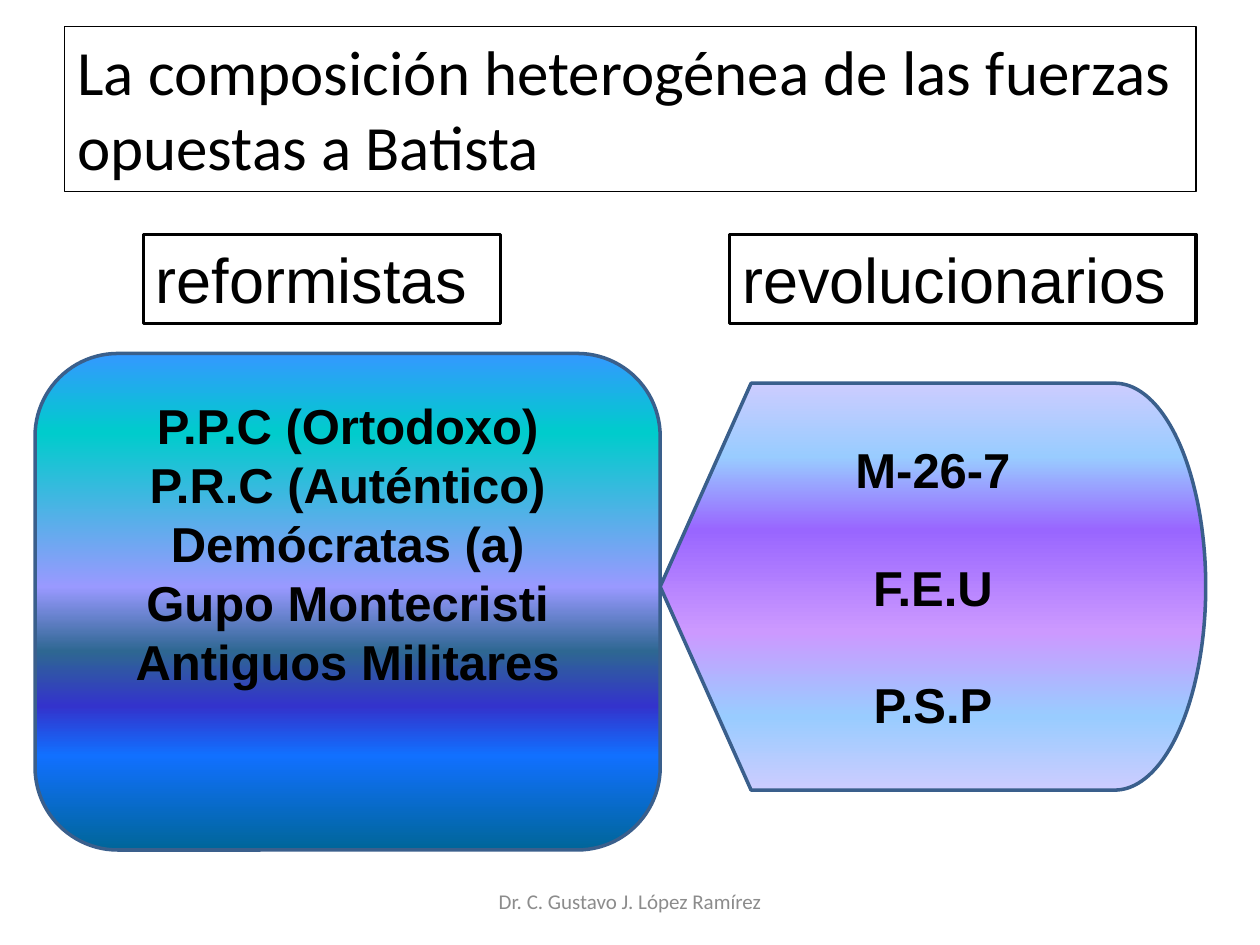
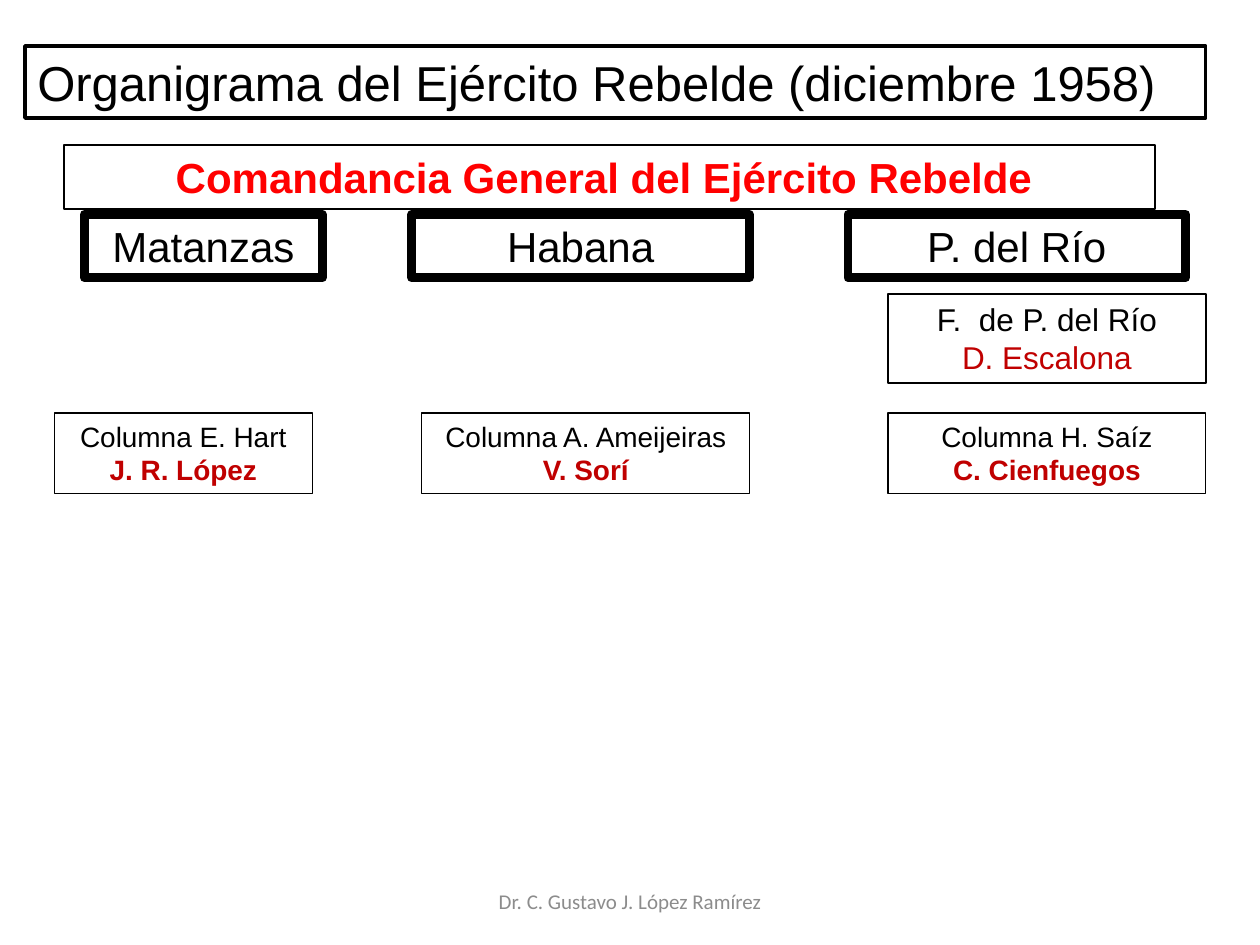
from lxml.etree import SubElement
from pptx import Presentation
from pptx.dml.color import RGBColor
from pptx.enum.shapes import MSO_SHAPE
from pptx.enum.text import MSO_ANCHOR, MSO_AUTO_SIZE, PP_ALIGN
from pptx.oxml.ns import qn
from pptx.util import Pt

BLACK, RED, DARK, GREY, BLUE = "000000", "FF0000", "C00000", "8C8C8C", "3A5F8C"
LEFT, CENTER = PP_ALIGN.LEFT, PP_ALIGN.CENTER
FOOTER = "Dr. C. Gustavo J. López Ramírez"


def color(code):
    return RGBColor.from_string(code)


def panel(slide, area, lines, size, width, align=CENTER, font="Arial",
          kind=MSO_SHAPE.RECTANGLE, edge=BLACK, stops=()):
    """Add a shape; each line is (text, colour, bold). No width means no outline."""
    shape = slide.shapes.add_shape(kind, *[Pt(n) for n in area])
    shape.shadow.inherit = False
    if width:
        shape.line.color.rgb = color(edge)
        shape.line.width = Pt(width)
    else:
        shape.line.fill.background()
    if stops:
        shape.fill.gradient()
        shape.fill.gradient_angle = 270
        ramp = next(shape._element.iter(qn("a:gsLst")))
        for old in list(ramp):
            ramp.remove(old)
        for place, code in stops:
            stop = SubElement(ramp, qn("a:gs"), pos=str(place * 1000))
            SubElement(stop, qn("a:srgbClr"), val=code)
    else:
        shape.fill.background()
    frame = shape.text_frame
    frame.word_wrap = True
    boxed = width and not stops
    frame.auto_size = MSO_AUTO_SIZE.SHAPE_TO_FIT_TEXT if boxed else MSO_AUTO_SIZE.NONE
    frame.vertical_anchor = MSO_ANCHOR.TOP if boxed else MSO_ANCHOR.MIDDLE
    frame.text = "\n".join(text for text, code, bold in lines)
    for para, (text, code, bold) in zip(frame.paragraphs, lines):
        para.alignment = align
        for run in para.runs:
            run.font.name = font
            run.font.size = Pt(size)
            run.font.bold = bold
            run.font.color.rgb = color(code)
    return frame


deck = Presentation()
deck.slide_width, deck.slide_height = Pt(720), Pt(540)
forces, army = [deck.slides.add_slide(deck.slide_layouts[6]) for _ in range(2)]
for slide in (forces, army):
    panel(slide, (246, 500.5, 228, 28.75), [(FOOTER, GREY, False)], 12, 0,
          font="Calibri")

# Slide 1: forces against Batista
title = "La composición heterogénea de las fuerzas opuestas a Batista"
panel(forces, (37, 15, 646.5, 94.5), [(title, BLACK, False)], 36, 0.75, LEFT, "Calibri")
for text, left, wide in (("reformistas", 82, 204), ("revolucionarios", 417, 266.5)):
    panel(forces, (left, 134, wide, 51), [(text, BLACK, False)], 36, 2, LEFT)

GAP = 33.6  # one line of 28 pt text
rebels = ["M-26-7", "F.E.U", "P.S.P"]
frame = panel(forces, (377.25, 219, 311.75, 232.5),
              [(name, BLACK, True) for name in rebels], 28, 2,
              kind=MSO_SHAPE.FLOWCHART_DISPLAY, edge=BLUE,
              stops=[(0, "CCCCFF"), (18, "99CCFF"), (36, "9966FF"),
                     (61, "CC99FF"), (82, "99CCFF"), (100, "CCCCFF")])
for para in frame.paragraphs[1:]:
    para.space_before = Pt(GAP)

parties = ["P.P.C (Ortodoxo)", "P.R.C (Auténtico)", "Demócratas (a)",
           "Gupo Montecristi", "Antiguos Militares"]
frame = panel(forces, (20, 202, 357.25, 283.75),
              [(name, BLACK, True) for name in parties], 28, 2,
              kind=MSO_SHAPE.ROUNDED_RECTANGLE, edge=BLUE,
              stops=[(0, "3399FF"), (16, "00CCCC"), (47, "9999FF"), (60, "2E6792"),
                     (71, "3333CC"), (81, "1170FF"), (100, "006699")])
frame.margin_bottom = Pt(3.6 + 2 * GAP)

# Slide 2: chart of the army
title = "Organigrama del Ejército Rebelde (diciembre 1958)"
panel(army, (14.25, 26.25, 674.75, 41.25), [(title, BLACK, False)], 28, 2, LEFT)
panel(army, (36.75, 83, 623.5, 36.25),
      [("Comandancia General del Ejército Rebelde ", RED, True)], 24, 1.25)
panel(army, (507.5, 168, 181.5, 51),
      [("F.  de P. del Río", BLACK, False), ("D. Escalona", DARK, False)], 18, 1)

# province, left, width; column, chief, left, width
fronts = [
    ("Matanzas", 48.25, 136, "Columna E. Hart", "J. R. López", 31, 147.5),
    ("Habana", 235.25, 193, "Columna A. Ameijeiras", "V. Sorí", 241, 187.5),
    ("P. del Río", 484.5, 193, "Columna H. Saíz", "C. Cienfuegos", 507.5, 181.5),
]
for place, left, wide, unit, chief, start, span in fronts:
    panel(army, (left, 122.5, wide, 36.25), [(place, BLACK, False)], 24, 5)
    panel(army, (start, 236, span, 46),
          [(unit, BLACK, False), (chief, DARK, True)], 16, 0.75)

deck.save("out.pptx")
